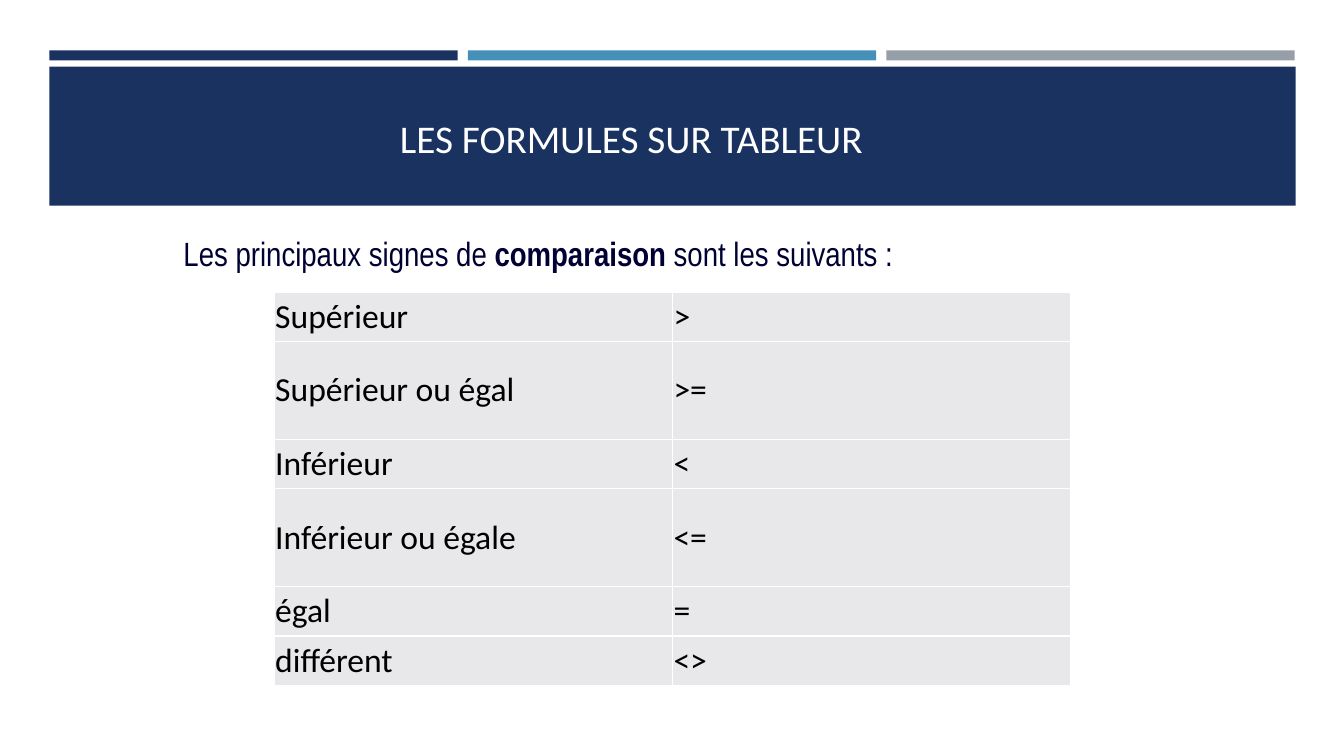
import pptx
import pptx.dml.color
import pptx.enum.shapes
import pptx.enum.text
import pptx.oxml
import pptx.oxml.ns
import pptx.util

PX = 9144  # EMU per px, 100 px to the inch
NAVY, BLUE, GREY = "1A3260", "4590B8", "969FA7"
WHITE, BLACK, INK, CELL = "FFFFFF", "000000", "000032", "E8E8EA"
ANCHOR = pptx.enum.text.MSO_ANCHOR
ALIGN = pptx.enum.text.PP_ALIGN

SIGNS = [
    ("Supérieur", ">", 49),
    ("Supérieur ou égal", ">=", 97),
    ("Inférieur", "<", 49),
    ("Inférieur ou égale", "<=", 97),
    ("égal", "=", 49),
    ("différent", "<>", 49),
]


def emu(*lengths):
    return [pptx.util.Emu(length * PX) for length in lengths]


def rgb(color):
    return pptx.dml.color.RGBColor.from_string(color)


def add_text(paragraph, text, size=24, font="Calibri", color=BLACK, bold=False):
    run = paragraph.add_run()
    run.text = text
    run.font.size = pptx.util.Pt(size)
    run.font.name = font
    run.font.bold = bold
    run.font.color.rgb = rgb(color)


def add_bar(slide, left, top, width, height, color):
    bar = slide.shapes.add_shape(
        pptx.enum.shapes.MSO_SHAPE.RECTANGLE, *emu(left, top, width, height))
    bar.shadow.inherit = False
    bar.fill.solid()
    bar.fill.fore_color.rgb = rgb(color)
    bar.line.fill.background()


def add_frame(slide, left, top, width, height, anchor):
    frame = slide.shapes.add_textbox(*emu(left, top, width, height)).text_frame
    frame.word_wrap = True
    frame.vertical_anchor = anchor
    return frame


def add_header(slide, left, top, width, height):
    """Three coloured strips above the title band."""
    gap, strip, band_top = 10, 10, 16
    strip_width = (width - 2 * gap) // 3
    for i, color in enumerate((NAVY, BLUE, GREY)):
        add_bar(slide, left + i * (strip_width + gap), top, strip_width, strip, color)
    add_bar(slide, left, top + band_top, width, height - band_top, NAVY)

    title = add_frame(slide, left + 238, top + 48, 678, 67, ANCHOR.BOTTOM).paragraphs[0]
    title.alignment = ALIGN.CENTER
    add_text(title, "LES FORMULES SUR TABLEUR", size=28, color=WHITE)


def add_intro(slide, left, top, width, height):
    frame = add_frame(slide, left, top, width, height, ANCHOR.TOP)
    frame.margin_left = emu(85)[0]
    for text, bold in (("Les principaux signes de ", False),
                       ("comparaison", True),
                       (" sont les suivants :", False)):
        add_text(frame.paragraphs[0], text, font="Arial Narrow", color=INK, bold=bold)


def add_borders(cell, color):
    properties = cell._tc.get_or_add_tcPr()
    for position, side in enumerate(("lnL", "lnR", "lnT", "lnB")):
        properties.insert(position, pptx.oxml.parse_xml(
            f'<a:{side} {pptx.oxml.ns.nsdecls("a")} w="12700"><a:solidFill>'
            f'<a:srgbClr val="{color}"/></a:solidFill></a:{side}>'))


def add_signs(slide, left, top, width):
    height = sum(row_height for _, _, row_height in SIGNS)
    table = slide.shapes.add_table(
        len(SIGNS), 2, *emu(left, top, width, height)).table
    table.first_row = table.horz_banding = False
    for row, (meaning, sign, row_height) in enumerate(SIGNS):
        table.rows[row].height = emu(row_height)[0]
        for column, text in enumerate((meaning, sign)):
            cell = table.cell(row, column)
            cell.fill.solid()
            cell.fill.fore_color.rgb = rgb(CELL)
            cell.vertical_anchor = ANCHOR.MIDDLE
            (cell.margin_left, cell.margin_right,
             cell.margin_top, cell.margin_bottom) = emu(1, 1, 1, 1)
            add_text(cell.text_frame.paragraphs[0], text)
            add_borders(cell, WHITE)


def main():
    deck = pptx.Presentation()
    deck.slide_width, deck.slide_height = emu(1333, 750)
    slide = deck.slides.add_slide(deck.slide_layouts[6])
    add_header(slide, 49, 50, 1236, 154)
    add_signs(slide, 272, 290, 790)
    add_intro(slide, 97, 226, 1043, 81)
    deck.save("out.pptx")


if __name__ == "__main__":
    main()
